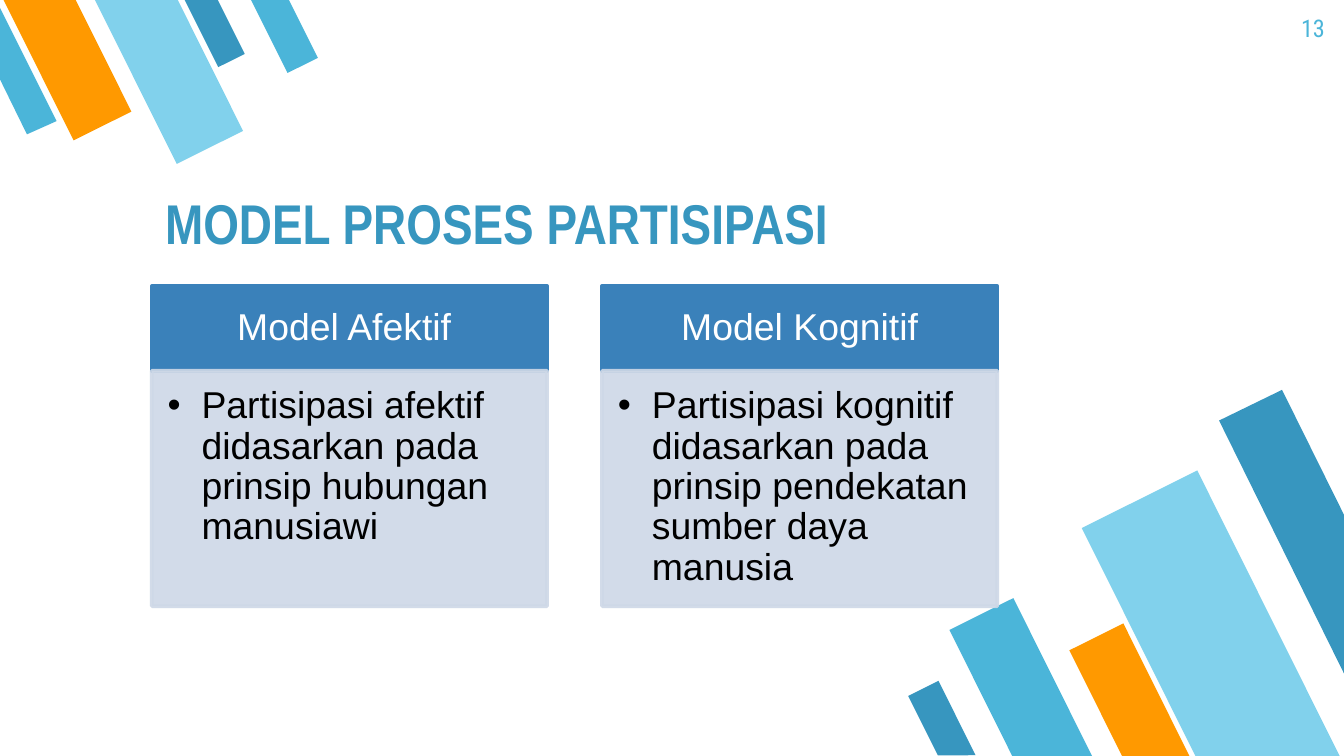
from pptx import Presentation
from pptx.dml.color import RGBColor
from pptx.enum import shapes, text
from pptx.oxml.ns import qn
from pptx.util import Cm, Pt
from lxml import etree

NAVY, SKY, PALE, ORANGE = "3796BF", "4BB5D9", "81D1EC", "FF9900"
HEAD, PANEL = "3A81BA", "CED8E7"

LOWER_STRIPES = [
    (18.62, 11.43, 1.35, 3.35, SKY),
    (21.67, 9.12, 2.44, 6.07, PALE),
    (20.78, 11.89, 1.14, 2.82, ORANGE),
    (17.48, 12.93, 0.64, 1.57, NAVY),
]
UPPER_STRIPES = [
    (3.78, -0.2, 0.56, 1.42, NAVY),
    (0.66, -0.46, 1.22, 3, ORANGE),
    (2.49, -0.51, 1.4, 3.48, PALE),
    (5.05, -0.25, 0.64, 1.57, SKY),
]
RIGHT_EDGE = [(24.23, 7.37), (23.04, 7.95), (25.4, 12.73), (25.4, 9.73)]
LEFT_EDGE = [(0.51, 2.54), (1.07, 2.29), (0, 0.15), (0, 1.5)]
MODELS = [
    ("Model Afektif ",
     "Partisipasi afektif didasarkan pada prinsip hubungan manusiawi"),
    ("Model Kognitif",
     "Partisipasi kognitif didasarkan pada prinsip pendekatan sumber daya manusia"),
]


def rgb(value):
    """Turn a hex string into a colour."""
    return RGBColor.from_string(value)


def paint(sp, fill, line=None):
    """Give a shape a flat fill and an optional 2 pt outline."""
    sp.shadow.inherit = False
    sp.fill.solid()
    sp.fill.fore_color.rgb = rgb(fill)
    if line:
        sp.line.color.rgb = rgb(line)
        sp.line.width = Pt(2)
    else:
        sp.line.fill.background()


def fade(sp, percent):
    """Set the opacity of a shape's fill and outline."""
    for clr in sp._element.spPr.iter(qn("a:srgbClr")):
        etree.SubElement(clr, qn("a:alpha")).set("val", str(percent * 1000))


def write(sp, words, size, font, color, align, anchor, insets, bold=False):
    """Put one formatted paragraph in a shape and return it."""
    tf = sp.text_frame
    tf.word_wrap = True
    tf.auto_size = text.MSO_AUTO_SIZE.NONE
    tf.vertical_anchor = anchor
    tf.margin_left, tf.margin_top, tf.margin_right, tf.margin_bottom = map(Cm, insets)
    tf.text = words
    p = tf.paragraphs[0]
    p.alignment = align
    r = p.runs[0]
    r.font.size, r.font.name, r.font.bold = Pt(size), font, bold
    r.font.color.rgb = rgb(color)
    return p


def add_bullet(p, color):
    """Give a paragraph a round bullet with a hanging indent."""
    pPr = p._p.get_or_add_pPr()
    pPr.set("marL", str(Cm(0.64)))
    pPr.set("indent", str(-Cm(0.64)))
    clr = etree.SubElement(pPr, qn("a:buClr"))
    etree.SubElement(clr, qn("a:srgbClr")).set("val", color)
    etree.SubElement(pPr, qn("a:buFont")).set("typeface", "Arial")
    etree.SubElement(pPr, qn("a:buChar")).set("char", "•")


def add_stripe(s, x, y, w, h, color, angle):
    """Add a mirrored slanting stripe."""
    sp = s.shapes.add_shape(shapes.MSO_SHAPE.FLOWCHART_MANUAL_INPUT,
                            Cm(x), Cm(y), Cm(w), Cm(h))
    sp.rotation = angle
    sp._element.spPr.find(qn("a:xfrm")).set("flipH", "1")
    paint(sp, color)


def add_edge_stripe(s, points, color):
    """Add a stripe cut off by the slide edge."""
    corners = [(Cm(x), Cm(y)) for x, y in points]
    fb = s.shapes.build_freeform(*corners[0])
    fb.add_line_segments(corners[1:], close=True)
    paint(fb.convert_to_shape(), color)


def add_title(s, words):
    """Place and format the title placeholder."""
    sp = s.shapes.title
    sp.left, sp.top, sp.width, sp.height = Cm(2.87), Cm(3.2), Cm(16), Cm(1.88)
    write(sp, words, 30, "Arial Narrow", NAVY, text.PP_ALIGN.LEFT,
          text.MSO_ANCHOR.BOTTOM, [0.25] * 4, bold=True)


def add_box(s, x, y, h, color):
    """Add one rectangle of a model column."""
    sp = s.shapes.add_shape(shapes.MSO_SHAPE.RECTANGLE, Cm(x), Cm(y), Cm(7.47), Cm(h))
    paint(sp, color, color)
    return sp


def add_model(s, x, name, description):
    """Add a model column: a heading above a bulleted panel."""
    head = add_box(s, x, 5.41, 1.6, HEAD)
    p = write(head, name, 20, "Arial", "FFFFFF", text.PP_ALIGN.CENTER,
              text.MSO_ANCHOR.MIDDLE, (0.41, 0.23, 0.41, 0.23))
    p.line_spacing = 0.9
    panel = add_box(s, x, 7.01, 4.45, PANEL)
    fade(panel, 90)
    p = write(panel, description, 20, "Arial", "000000", text.PP_ALIGN.LEFT,
              text.MSO_ANCHOR.TOP, (0.3, 0.3, 0.41, 0.43))
    p.line_spacing = 0.9
    add_bullet(p, "000000")


def add_page_number(s, number):
    """Add the page number in the upper right corner."""
    sp = s.shapes.add_textbox(Cm(23.77), Cm(0), Cm(1.52), Cm(1.09))
    write(sp, number, 13, "Roboto Condensed", SKY, text.PP_ALIGN.RIGHT,
          text.MSO_ANCHOR.TOP, [0.25] * 4)


def main():
    """Build the slide and save it."""
    prs = Presentation()
    prs.slide_width, prs.slide_height = Cm(25.4), Cm(14.29)
    s = prs.slides.add_slide(prs.slide_layouts[5])
    for stripes, angle in ((LOWER_STRIPES, 153.5), (UPPER_STRIPES, 333.5)):
        for stripe in stripes:
            add_stripe(s, *stripe, angle)
    add_edge_stripe(s, RIGHT_EDGE, NAVY)
    add_edge_stripe(s, LEFT_EDGE, SKY)
    add_title(s, "MODEL PROSES PARTISIPASI")
    for i, (name, description) in enumerate(MODELS):
        add_model(s, 2.87 + i * 8.51, name, description)
    add_page_number(s, "13")
    prs.save("out.pptx")


if __name__ == "__main__":
    main()
